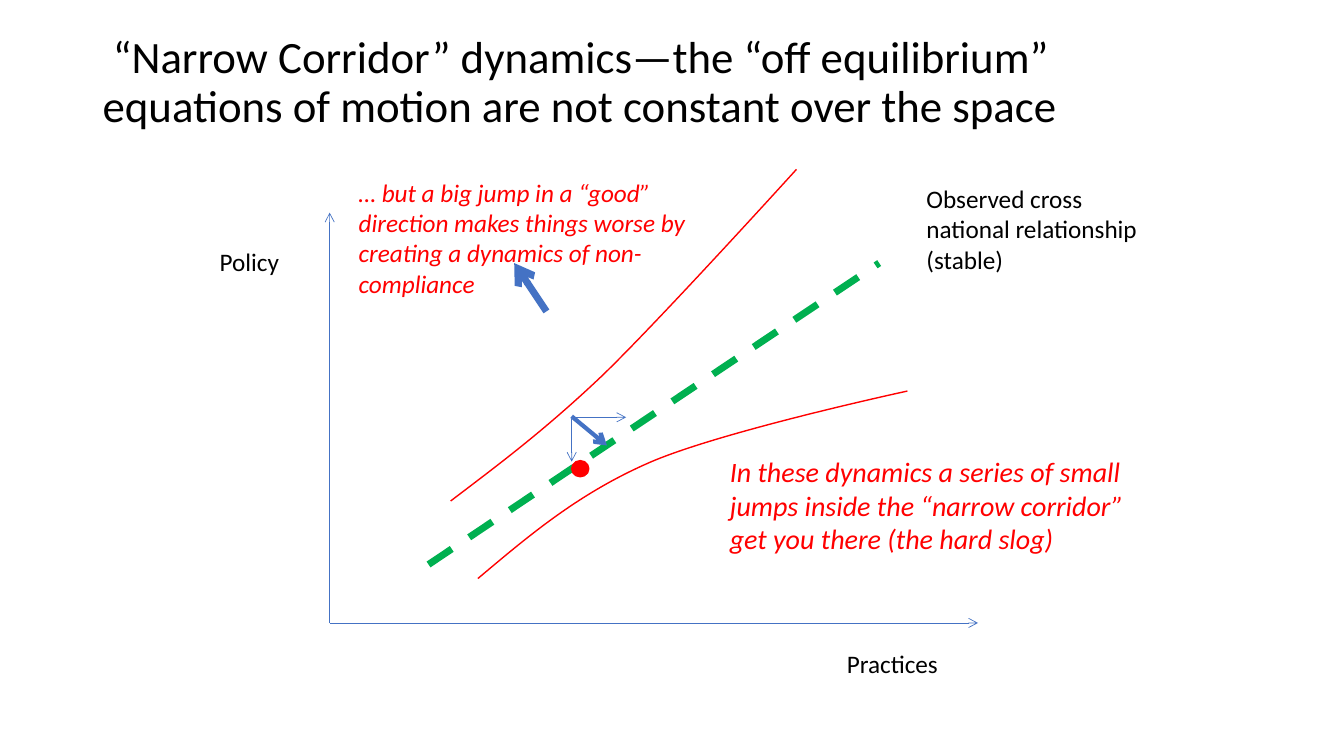
from lxml import etree
from pptx import Presentation
from pptx.dml.color import RGBColor
from pptx.enum.dml import MSO_LINE
from pptx.enum.shapes import MSO_CONNECTOR, MSO_SHAPE
from pptx.enum.text import MSO_ANCHOR, MSO_AUTO_SIZE
from pptx.oxml.ns import qn
from pptx.util import Inches, Pt

STRAIGHT = MSO_CONNECTOR.STRAIGHT
OVAL = MSO_SHAPE.OVAL
DASH = MSO_LINE.DASH
MIDDLE = MSO_ANCHOR.MIDDLE
FIXED = MSO_AUTO_SIZE.NONE
FONT = "Calibri"
BLACK, RED, BLUE, GREEN = "000000", "FF0000", "4472C4", "00B050"


def color(code):
    return RGBColor.from_string(code)


def stroke(line, code, width):
    line.color.rgb = color(code)
    line.width = Pt(width)


def add_line(slide, start, end, code, width):
    link = slide.shapes.add_connector(
        STRAIGHT, *[Inches(v) for v in (*start, *end)])
    stroke(link.line, code, width)
    etree.SubElement(link._element.spPr, qn("a:effectLst"))
    return link


def add_arrow(slide, start, end, width=0.5):
    link = add_line(slide, start, end, BLUE, width)
    line = link._element.spPr.find(qn("a:ln"))
    tail = etree.SubElement(line, qn("a:tailEnd"))
    tail.set("type", "arrow")


def add_text(slide, text, box, size=18, code=BLACK, italic=False, wrap=True):
    shape = slide.shapes.add_textbox(*[Inches(v) for v in box])
    frame = shape.text_frame
    frame.word_wrap = wrap
    para = frame.paragraphs[0]
    para.text = text
    font = para.font
    font.name = FONT
    font.size = Pt(size)
    font.italic = italic
    font.color.rgb = color(code)
    return frame


def add_curve(slide, knots):
    spots = [(Inches(x), Inches(y)) for x, y in knots]
    build = slide.shapes.build_freeform(*spots[0])
    build.add_line_segments(spots[1:], close=False)
    shape = build.convert_to_shape()
    parts = list(shape._element.iter(qn("a:lnTo")))
    for i in range(0, len(parts), 3):
        bend = etree.Element(qn("a:cubicBezTo"))
        parts[i].addprevious(bend)
        for part in parts[i:i + 3]:
            bend.append(part[0])
            part.getparent().remove(part)
    shape.shadow.inherit = False
    shape.fill.background()
    stroke(shape.line, RED, 1)


def add_dot(slide, box):
    dot = slide.shapes.add_shape(OVAL, *[Inches(v) for v in box])
    dot.shadow.inherit = False
    dot.fill.solid()
    dot.fill.fore_color.rgb = color(RED)
    stroke(dot.line, RED, 1)


def add_title(slide, text):
    frame = add_text(slide, text, (0.92, 0.39, 10.32, 1.36), 32)
    frame.auto_size = FIXED
    frame.vertical_anchor = MIDDLE
    frame.margin_bottom = Inches(0.53)
    frame.paragraphs[0].line_spacing = 0.9


def main():
    deck = Presentation()
    deck.slide_width, deck.slide_height = Inches(13.33), Inches(7.5)
    slide = deck.slides.add_slide(deck.slide_layouts[6])

    origin = (3.27, 6.18)
    add_arrow(slide, origin, (9.7, 6.18))
    add_arrow(slide, origin, (3.27, 2.11))
    trend = add_line(slide, (4.25, 5.6), (8.72, 2.61), GREEN, 5)
    trend.line.dash_style = DASH

    add_text(slide, "Policy", (2.08, 2.39, 0.8, 0.4), wrap=False)
    add_text(slide, "Practices", (8.3, 6.38, 1.12, 0.4), wrap=False)
    add_text(slide, "Observed cross national relationship (stable)",
             (9.09, 1.77, 2.41, 1.01))
    add_title(slide, " “Narrow Corridor” dynamics—the “off equilibrium” "
              "equations of motion are not constant over the space")

    add_curve(slide, [(4.47, 4.97), (4.93, 4.62), (5.39, 4.28), (5.97, 3.73),
                      (6.54, 3.18), (7.9, 1.68), (7.9, 1.68)])
    add_curve(slide, [(4.74, 5.74), (5.24, 5.32), (5.73, 4.9), (6.44, 4.59),
                      (7.15, 4.28), (9, 3.88), (9, 3.88)])

    add_arrow(slide, (5.67, 4.14), (6.21, 4.14))
    add_arrow(slide, (5.67, 4.16), (5.67, 4.58))
    add_arrow(slide, (5.42, 3.09), (5.1, 2.61), 5)
    add_dot(slide, (5.67, 4.57, 0.17, 0.16))
    add_text(slide, "In these dynamics a series of small jumps inside the "
             "“narrow corridor” get you there (the hard slog)",
             (7.14, 4.46, 4.19, 1.11), 20, RED, True)
    add_arrow(slide, (5.67, 4.13), (6.02, 4.42), 3)
    add_text(slide, "… but a big jump in a “good” direction makes things "
             "worse by creating a dynamics of non-compliance",
             (3.46, 1.71, 3.54, 1.31), 18, RED, True)

    deck.save("out.pptx")


if __name__ == "__main__":
    main()
